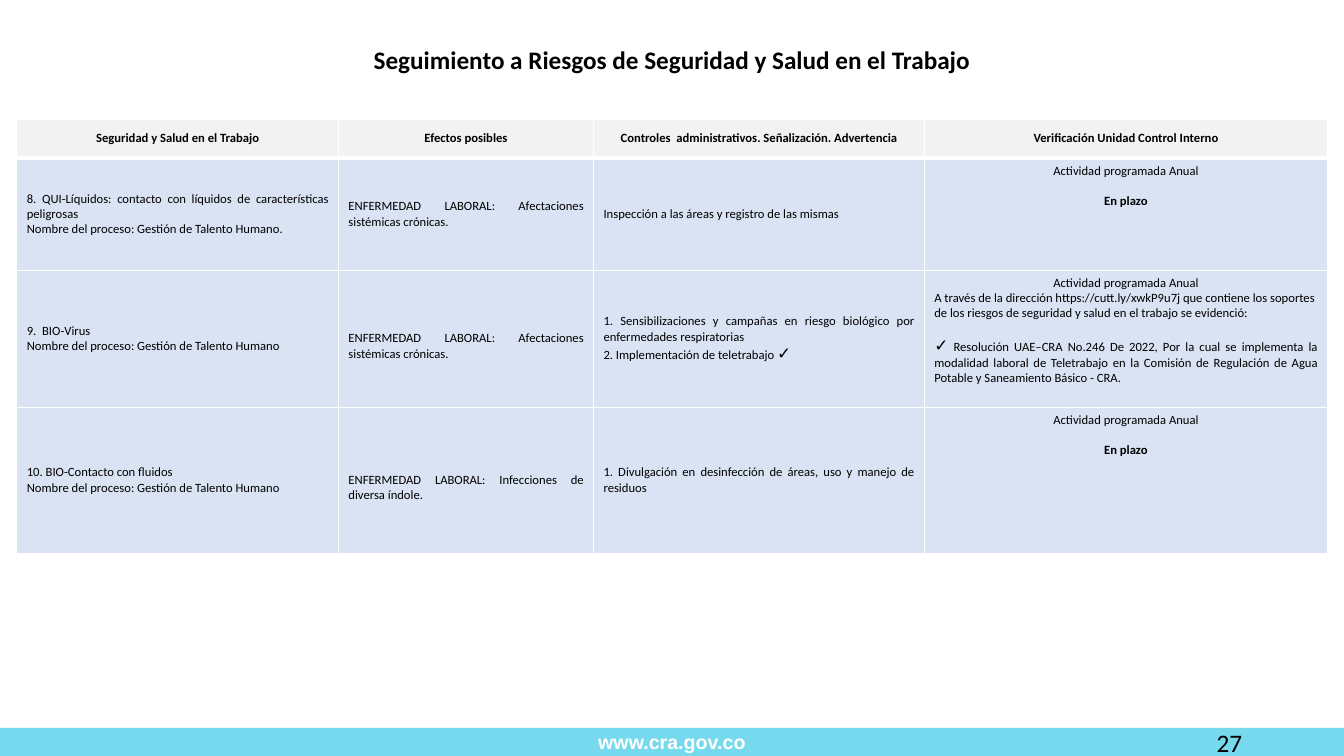
from dataclasses import dataclass

from lxml.etree import SubElement
from pptx import Presentation
from pptx.dml.color import RGBColor
from pptx.enum.shapes import MSO_SHAPE
from pptx.enum.text import MSO_ANCHOR as Anchor, PP_ALIGN as Align
from pptx.oxml.ns import qn
from pptx.util import Inches, Pt

SLIDE_W, SLIDE_H = Inches(13.33), Inches(7.5)


@dataclass(frozen=True)
class Style:
    size: float
    font: str = "Calibri"
    color: str = "000000"
    bold: bool = False


@dataclass(frozen=True)
class Theme:
    bar: str = "77D9ED"
    header: str = "F2F2F2"
    body: str = "DAE3F3"
    border: str = "FFFFFF"
    thin: float = 1
    thick: float = 3
    line: float = 11
    title: Style = Style(18, bold=True)
    number: Style = Style(18)
    site: Style = Style(14, "Arial", "FFFFFF", True)
    cell: Style = Style(9)
    strong: Style = Style(9, bold=True)
    check: Style = Style(12, "Arial")


T = Theme()


@dataclass(frozen=True)
class Para:
    text: str
    align: Align = Align.JUSTIFY
    style: Style = T.cell
    before: float = 0


@dataclass(frozen=True)
class Cell:
    paras: tuple
    anchor: Anchor = Anchor.MIDDLE
    lines_above: int = 0


COLUMNS = (23.93, 18.98, 24.61, 30.01)
ROWS = (5.2, 14.8, 18.13, 19.33)

HEADERS = (
    "Seguridad y Salud en el Trabajo",
    "Efectos posibles",
    "Controles  administrativos. Señalización. Advertencia",
    "Verificación Unidad Control Interno",
)
PROCESS = "Nombre del proceso: Gestión de Talento Humano"
EFFECT = "ENFERMEDAD LABORAL: Afectaciones sistémicas crónicas."
ANNUAL = Para("Actividad programada Anual", Align.CENTER)
ON_TIME = Cell((ANNUAL, Para("En plazo", Align.CENTER, T.strong, T.line)), Anchor.TOP)


def middle(*texts, lines_above=0):
    return Cell(tuple(Para(t) for t in texts), lines_above=lines_above)


RISKS = (
    (
        middle("8. QUI-Líquidos: contacto con líquidos de características peligrosas",
               PROCESS + "."),
        middle(EFFECT),
        middle("Inspección a las áreas y registro de las mismas"),
        ON_TIME,
    ),
    (
        middle("9.  BIO-Virus", PROCESS),
        middle(EFFECT, lines_above=1),
        middle("1. Sensibilizaciones y campañas en riesgo biológico por "
               "enfermedades respiratorias",
               "2. Implementación de teletrabajo ✓"),
        Cell((
            ANNUAL,
            Para("A través de la dirección https://cutt.ly/xwkP9u7j que contiene los "
                 "soportes de los riesgos de seguridad y salud en el trabajo se "
                 "evidenció:", Align.LEFT),
            Para("✓ Resolución UAE–CRA No.246 De 2022, Por la cual se implementa la "
                 "modalidad laboral de Teletrabajo en la Comisión de Regulación de "
                 "Agua Potable y Saneamiento Básico - CRA.", before=T.line),
        ), Anchor.TOP),
    ),
    (
        middle("10. BIO-Contacto con fluidos", PROCESS),
        middle("ENFERMEDAD LABORAL: Infecciones de diversa índole.", lines_above=1),
        middle("1. Divulgación en desinfección de áreas, uso y manejo de residuos"),
        ON_TIME,
    ),
)


def across(percent):
    return round(SLIDE_W * percent / 100)


def down(percent):
    return round(SLIDE_H * percent / 100)


def box(left, top, width, height):
    return across(left), down(top), across(width), down(height)


def paint(fill, color):
    fill.solid()
    fill.fore_color.rgb = RGBColor.from_string(color)


def add_run(p, text, style):
    r = p.add_run()
    r.text = text
    r.font.size = Pt(style.size)
    r.font.name = style.font
    r.font.bold = style.bold
    r.font.color.rgb = RGBColor.from_string(style.color)


def write(tf, paras):
    tf.word_wrap = True
    for i, para in enumerate(paras):
        p = tf.add_paragraph() if i else tf.paragraphs[0]
        p.alignment = para.align
        if para.before:
            p.space_before = Pt(para.before)
        before, mark, after = para.text.partition("✓")
        for text, style in ((before, para.style), (mark, T.check), (after, para.style)):
            if text:
                add_run(p, text, style)


def add_label(s, area, para):
    sp = s.shapes.add_textbox(*area)
    write(sp.text_frame, [para])


def add_bar(s, area, para):
    sp = s.shapes.add_shape(MSO_SHAPE.RECTANGLE, *area)
    sp.shadow.inherit = False
    paint(sp.fill, T.bar)
    sp.line.fill.background()
    sp.text_frame.vertical_anchor = Anchor.MIDDLE
    write(sp.text_frame, [para])


def set_borders(cell, top, bottom):
    tc_pr = cell._tc.get_or_add_tcPr()
    widths = {"a:lnL": T.thin, "a:lnR": T.thin, "a:lnT": top, "a:lnB": bottom}
    for i, (tag, width) in enumerate(widths.items()):
        ln = SubElement(tc_pr, qn(tag), w=str(Pt(width)))
        fill = SubElement(ln, qn("a:solidFill"))
        SubElement(fill, qn("a:srgbClr"), val=T.border)
        tc_pr.insert(i, ln)


def fill_cell(cell, content, row):
    paint(cell.fill, T.body if row else T.header)
    set_borders(cell, T.thick if row == 1 else T.thin, T.thin if row else T.thick)
    cell.vertical_anchor = content.anchor
    cell.margin_top = Inches(0.05) + Pt(T.line * content.lines_above)
    write(cell.text_frame, content.paras)


def add_risk_table(s, left, top):
    header = [Cell((Para(t, Align.CENTER, T.strong),)) for t in HEADERS]
    rows = [header, *RISKS]
    area = box(left, top, sum(COLUMNS), sum(ROWS))
    table = s.shapes.add_table(len(rows), len(COLUMNS), *area).table
    for column, width in zip(table.columns, COLUMNS):
        column.width = across(width)
    for i, (row, height) in enumerate(zip(table.rows, ROWS)):
        row.height = down(height)
        for cell, content in zip(row.cells, rows[i]):
            fill_cell(cell, content, i)


def main():
    prs = Presentation()
    prs.slide_width, prs.slide_height = SLIDE_W, SLIDE_H
    s = prs.slides.add_slide(prs.slide_layouts[6])
    add_bar(s, box(0, 96.27, 100, 3.73), Para("www.cra.gov.co", Align.CENTER, T.site))
    add_label(s, box(70.67, 95.6, 22.5, 5.33), Para("27", Align.RIGHT, T.number))
    add_label(s, box(1.13, 5.2, 97.75, 5.33),
              Para("Seguimiento a Riesgos de Seguridad y Salud en el Trabajo",
                   Align.CENTER, T.title))
    add_risk_table(s, 1.25, 15.73)
    prs.save("out.pptx")


if __name__ == "__main__":
    main()
